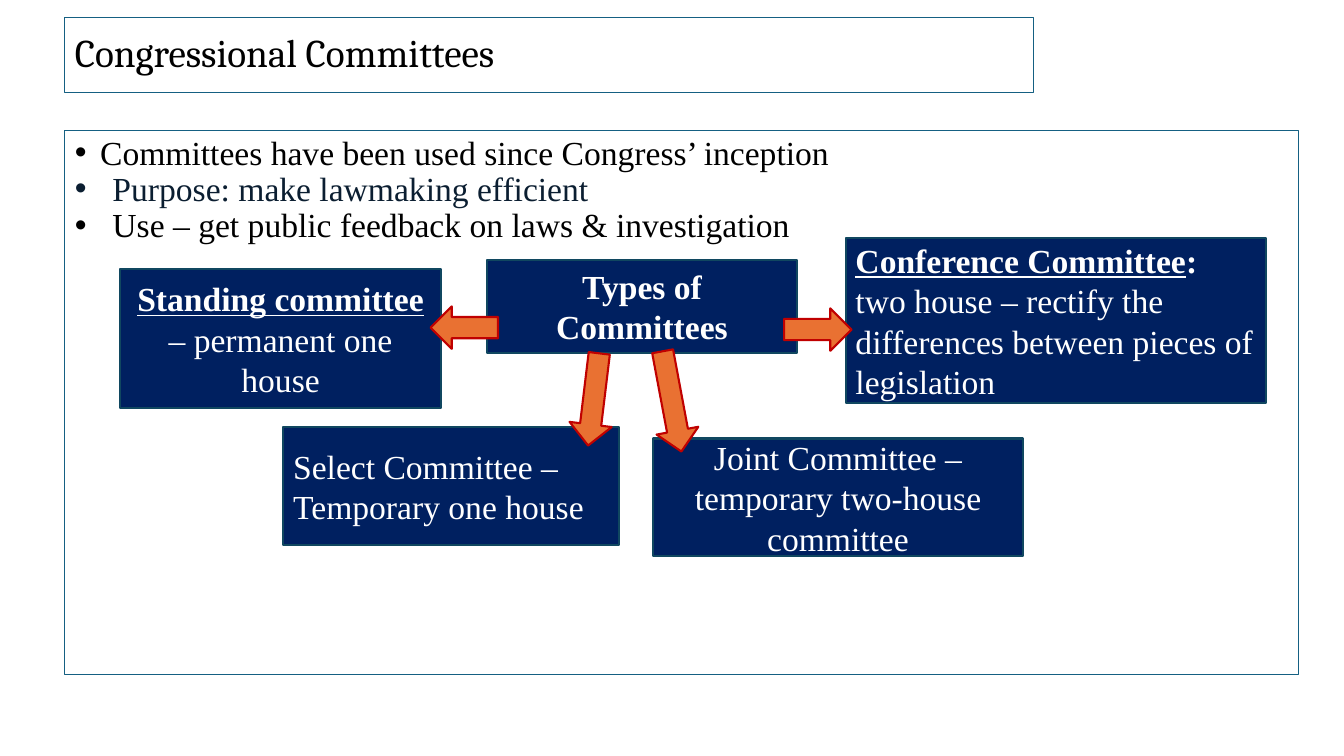
from dataclasses import dataclass

from lxml import etree
from pptx import Presentation
from pptx.dml.color import RGBColor
from pptx.enum.shapes import MSO_SHAPE
from pptx.enum.text import MSO_ANCHOR, MSO_AUTO_SIZE, PP_ALIGN
from pptx.oxml.ns import qn
from pptx.util import Cm, Pt

RECTANGLE = MSO_SHAPE.RECTANGLE
RIGHT_ARROW = MSO_SHAPE.RIGHT_ARROW
TOP = MSO_ANCHOR.TOP
MIDDLE = MSO_ANCHOR.MIDDLE
NO_AUTOFIT = MSO_AUTO_SIZE.NONE
LEFT = PP_ALIGN.LEFT
CENTER = PP_ALIGN.CENTER
TITLE_AND_CONTENT = 1


@dataclass(frozen=True)
class Theme:
    title_font: str = "Cambria"
    text_font: str = "Times New Roman"
    title_size: int = 28
    text_size: int = 24
    black: str = "000000"
    white: str = "FFFFFF"
    ink: str = "0B1E31"
    frame_line: str = "156082"
    box_fill: str = "002060"
    box_line: str = "104760"
    arrow_fill: str = "E97132"
    arrow_line: str = "C00000"


THEME = Theme()
PLAIN = {}
BOLD = {"bold": True}
HEADING = {"bold": True, "underline": True}

BULLETS = [
    ("Committees have been used since Congress’ inception", THEME.black, 0.64),
    ("Purpose: make lawmaking efficient", THEME.ink, 0.95),
    ("Use – get public feedback on laws & investigation", THEME.black, 0.95),
]

COMMITTEE_BOXES = [
    ((12.27, 6.55, 7.82, 2.34), CENTER, [("Types of Committees", BOLD)]),
    ((3.02, 6.78, 8.1, 3.51), CENTER,
     [("Standing committee ", HEADING), ("– permanent one house", PLAIN)]),
    ((7.14, 10.77, 8.46, 2.97), LEFT,
     [("Select Committee – Temporary one house", PLAIN)]),
    ((16.46, 11.05, 9.32, 2.97), CENTER,
     [("Joint Committee – temporary two-house committee", PLAIN)]),
    ((21.31, 5.99, 10.59, 4.17), LEFT,
     [("Conference Committee", HEADING), (": ", BOLD),
      ("two house – rectify the differences between pieces of legislation", PLAIN)]),
]

ARROWS = [
    ((19.76, 7.77, 1.7, 1.07), 0),
    ((15.65, 9.58, 2.57, 1.07), 79.4),
    ((10.85, 7.72, 1.7, 1.07), 180),
    ((13.79, 9.53, 2.34, 1.07), 96.9),
]


def set_attributes(target, values):
    for name, value in values.items():
        setattr(target, name, value)


def place(shape, bounds):
    sides = ("left", "top", "width", "height")
    set_attributes(shape, dict(zip(sides, map(Cm, bounds))))


def paint(shape, fill, line, line_width):
    shape.fill.solid()
    shape.fill.fore_color.rgb = RGBColor.from_string(fill)
    shape.line.color.rgb = RGBColor.from_string(line)
    shape.line.width = Pt(line_width)


def add_run(paragraph, text, color, font=THEME.text_font, size=THEME.text_size, **style):
    run = paragraph.add_run()
    run.text = text
    set_attributes(run.font, {"name": font, "size": Pt(size), **style})
    run.font.color.rgb = RGBColor.from_string(color)


def add_bullet(paragraph, indent):
    properties = paragraph._p.get_or_add_pPr()
    properties.set("marL", str(Cm(indent)))
    properties.set("indent", str(-Cm(indent)))
    etree.SubElement(properties, qn("a:buFont")).set("typeface", "Arial")
    etree.SubElement(properties, qn("a:buChar")).set("char", "•")


def format_placeholder(placeholder, bounds, anchor):
    place(placeholder, bounds)
    paint(placeholder, THEME.white, THEME.frame_line, 0.75)
    set_attributes(placeholder.text_frame, {
        "vertical_anchor": anchor, "auto_size": NO_AUTOFIT, "word_wrap": True})


def fill_title(slide):
    title = slide.shapes.title
    format_placeholder(title, (1.63, 0.43, 24.41, 1.9), MIDDLE)
    paragraph = title.text_frame.paragraphs[0]
    set_attributes(paragraph, {"alignment": LEFT, "line_spacing": 0.9})
    add_run(paragraph, "Congressional Committees", THEME.black,
            THEME.title_font, THEME.title_size)


def fill_body(slide):
    body = slide.placeholders[1]
    format_placeholder(body, (1.63, 3.3, 31.09, 13.69), TOP)
    frame = body.text_frame
    for index, (text, color, indent) in enumerate(BULLETS):
        paragraph = frame.add_paragraph() if index else frame.paragraphs[0]
        add_bullet(paragraph, indent)
        set_attributes(paragraph, {"line_spacing": 0.9, "space_before": Pt(0)})
        add_run(paragraph, text, color)


def add_preset(slide, kind, bounds, fill, line):
    shape = slide.shapes.add_shape(kind, *map(Cm, bounds))
    shape.shadow.inherit = False
    paint(shape, fill, line, 1.5)
    return shape


def add_committee_box(slide, bounds, alignment, runs):
    box = add_preset(slide, RECTANGLE, bounds, THEME.box_fill, THEME.box_line)
    set_attributes(box.text_frame, {"vertical_anchor": MIDDLE, "word_wrap": True})
    paragraph = box.text_frame.paragraphs[0]
    paragraph.alignment = alignment
    for text, style in runs:
        add_run(paragraph, text, THEME.white, **style)


def add_arrow(slide, bounds, rotation):
    arrow = add_preset(slide, RIGHT_ARROW, bounds, THEME.arrow_fill, THEME.arrow_line)
    arrow.rotation = rotation


def main():
    presentation = Presentation()
    set_attributes(presentation, {"slide_width": Cm(33.87), "slide_height": Cm(19.05)})
    slide = presentation.slides.add_slide(presentation.slide_layouts[TITLE_AND_CONTENT])
    fill_title(slide)
    fill_body(slide)
    for bounds, alignment, runs in COMMITTEE_BOXES:
        add_committee_box(slide, bounds, alignment, runs)
    for bounds, rotation in ARROWS:
        add_arrow(slide, bounds, rotation)
    presentation.save("out.pptx")


if __name__ == "__main__":
    main()
